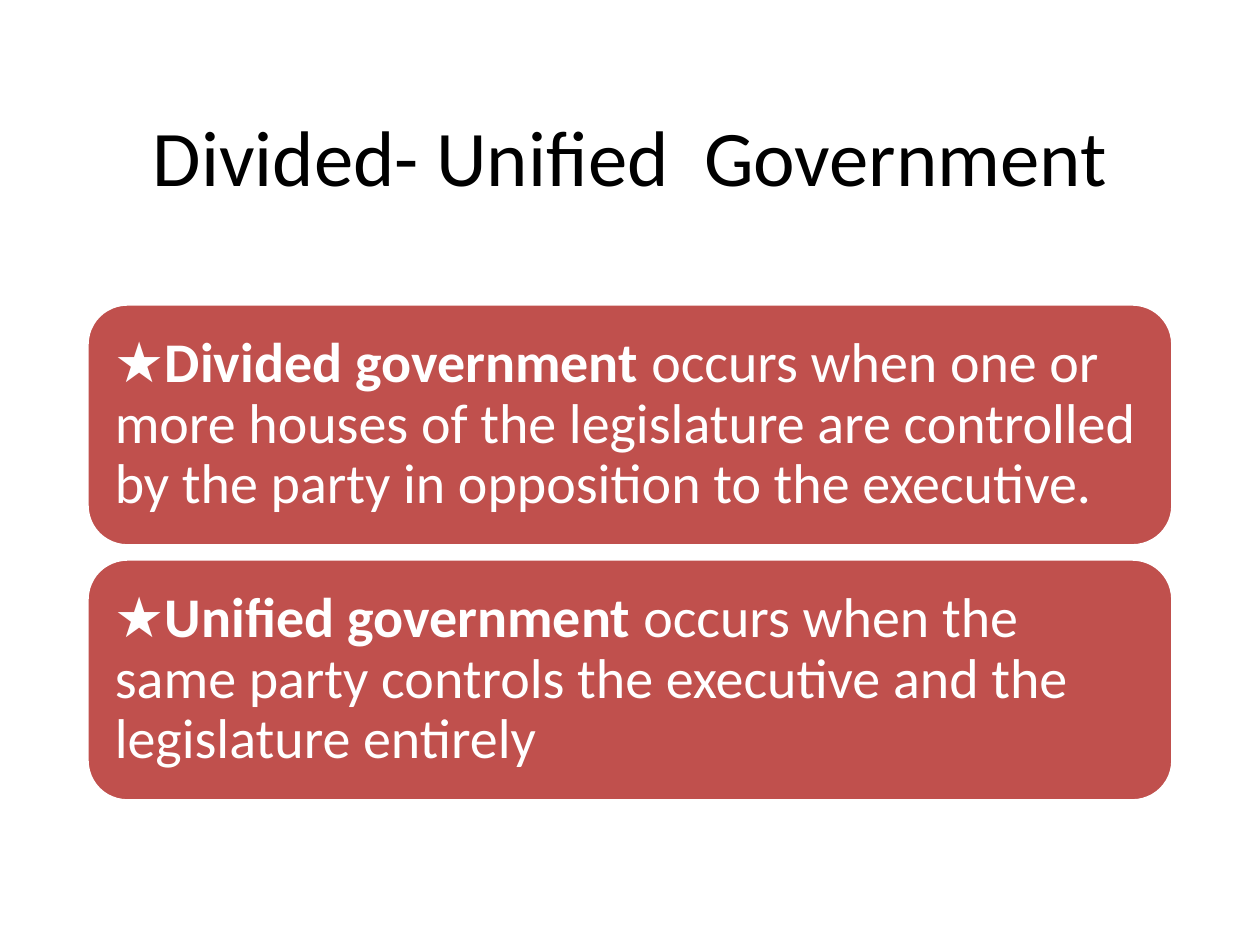
from pptx import Presentation
from pptx.dml.color import RGBColor
from pptx.enum.shapes import MSO_SHAPE as Shape
from pptx.enum.text import MSO_ANCHOR as Anchor, PP_ALIGN as Align
from pptx.util import Pt

PX = 914400 // 126
FONT = "Calibri"
BLACK = RGBColor(0, 0, 0)
WHITE = RGBColor(255, 255, 255)
RED = RGBColor(0xC0, 0x50, 0x4D)
LEFT, WIDE = 87, 1086
TOP, HIGH, STEP = 304, 242, 255
INSET = 16

CARDS = [
    [("★", False), ("Divided government ", True),
     ("occurs when one or more houses of the legislature are controlled "
      "by the party in opposition to the executive.", False)],
    [("★", False), ("Unified government ", True),
     ("occurs when the same party controls the executive and the "
      "legislature entirely", False)],
]


def style(run, size, color, bold=False):
    font = run.font
    font.name = FONT
    font.size = Pt(size)
    font.bold = bold
    font.color.rgb = color


deck = Presentation()
deck.slide_width = 1260 * PX
deck.slide_height = 945 * PX
slide = deck.slides.add_slide(deck.slide_layouts[6])

title = slide.shapes.add_textbox(LEFT * PX, 77 * PX, WIDE * PX, 156 * PX)
frame = title.text_frame
frame.word_wrap = True
frame.vertical_anchor = Anchor.MIDDLE
frame.text = "Divided- Unified  Government"
frame.paragraphs[0].alignment = Align.CENTER
style(frame.paragraphs[0].runs[0], 45, BLACK)

for i, parts in enumerate(CARDS):
    card = slide.shapes.add_shape(
        Shape.ROUNDED_RECTANGLE,
        LEFT * PX, (TOP + i * STEP) * PX, WIDE * PX, HIGH * PX)
    card.shadow.inherit = False
    card.fill.solid()
    card.fill.fore_color.rgb = RED
    card.line.color.rgb = WHITE
    card.line.width = Pt(2)

    frame = card.text_frame
    frame.word_wrap = True
    frame.vertical_anchor = Anchor.MIDDLE
    frame.margin_left = frame.margin_right = INSET * PX
    frame.margin_top = frame.margin_bottom = INSET * PX
    para = frame.paragraphs[0]
    para.alignment = Align.LEFT
    para.line_spacing = 0.9
    for text, bold in parts:
        run = para.add_run()
        run.text = text
        style(run, 32, WHITE, bold)

deck.save("out.pptx")
